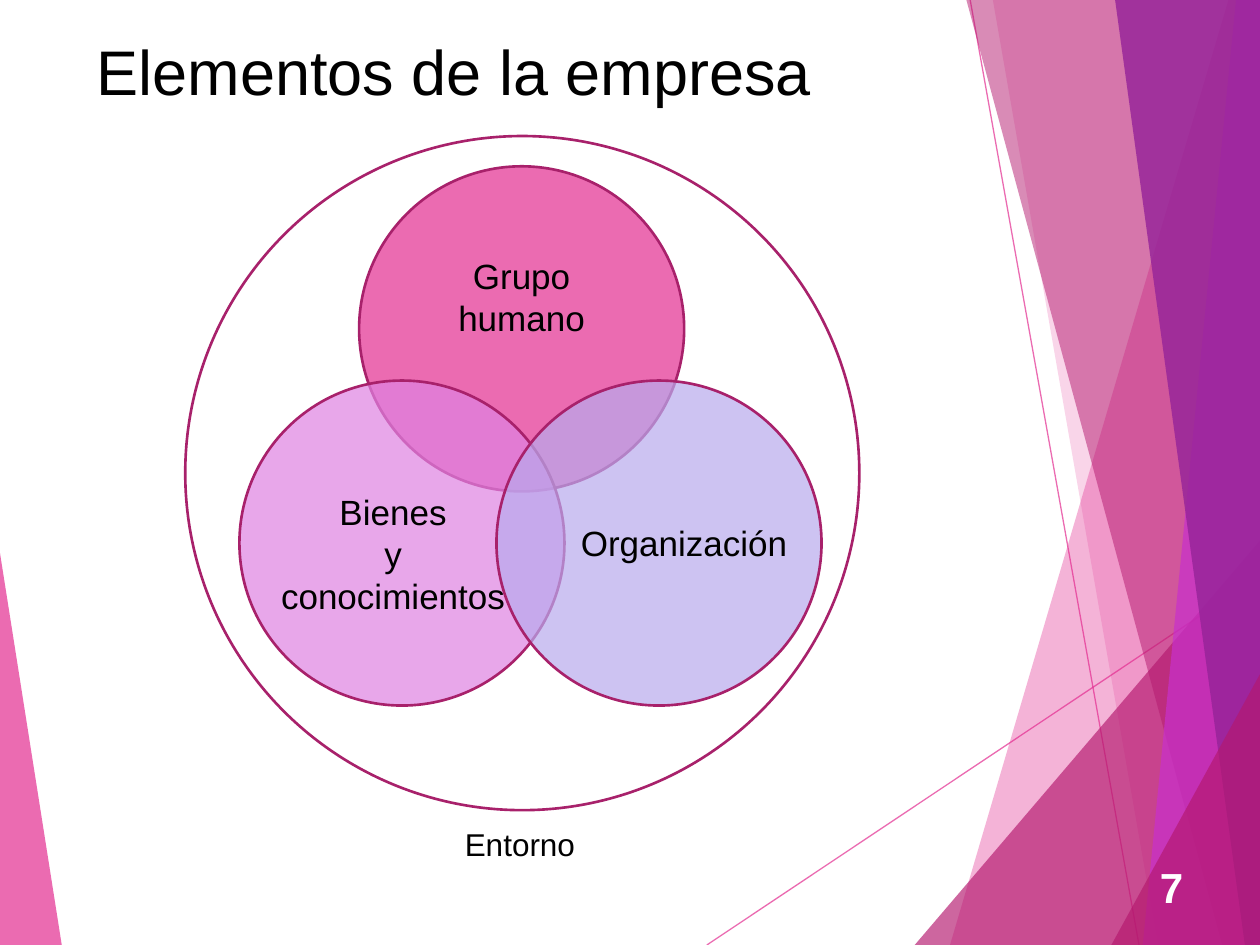
from lxml import etree
from pptx import Presentation
from pptx.dml.color import RGBColor
from pptx.enum.shapes import MSO_CONNECTOR, MSO_SHAPE
from pptx.enum.text import MSO_ANCHOR, MSO_AUTO_SIZE, PP_ALIGN
from pptx.oxml.ns import qn
from pptx.util import Inches, Pt

LEFT, CENTER, RIGHT = PP_ALIGN.LEFT, PP_ALIGN.CENTER, PP_ALIGN.RIGHT
TOP, MIDDLE = MSO_ANCHOR.TOP, MSO_ANCHOR.MIDDLE
OVAL, STRAIGHT = MSO_SHAPE.OVAL, MSO_CONNECTOR.STRAIGHT
GROW, FIXED = MSO_AUTO_SIZE.SHAPE_TO_FIT_TEXT, MSO_AUTO_SIZE.NONE

FONT = "Arial"
PINK, MAGENTA, ORCHID, PURPLE = "E32D91", "B4186E", "C830CC", "962499"
OUTLINE, BLACK, WHITE = "A8216B", "000000", "FFFFFF"

# Background: corner points, colour, opacity in percent
left_wedge = ([(0, 4.39), (0.49, 7.5), (0, 7.5)], PINK, 70)
rays = [((5.61, 7.5), (10, 4.57)), ((7.7, 0), (9.04, 7.5))]
right_facets = [
    ([(9.75, 0), (7.54, 7.5), (10, 7.5), (10, 0)], PINK, 36),
    ([(7.88, 0), (9.19, 7.5), (10, 7.5), (10, 0)], PINK, 20),
    ([(7.26, 7.5), (10, 4.29), (10, 7.5)], MAGENTA, 66),
    ([(7.67, 0), (9.7, 7.5), (10, 7.5), (10, 0)], MAGENTA, 50),
    ([(9.81, 0), (9.07, 7.5), (10, 7.5), (10, 0)], ORCHID, 70),
    ([(8.85, 0), (9.88, 7.5), (10, 7.5), (10, 0)], PURPLE, 82),
    ([(8.82, 7.5), (10, 5.35), (10, 7.5)], MAGENTA, 66),
]

# Diagram: left, top, diameter, fill
ELEMENT_SIZE = 2.58
elements = [
    (2.85, 1.32, ELEMENT_SIZE, PINK),
    (1.9, 3.02, ELEMENT_SIZE, "DF82E2"),
    (3.94, 3.02, ELEMENT_SIZE, "B8AAED"),
]
environment = (1.47, 1.08, 5.35, None)

# Labels: lines, box, size, alignment
labels = [
    (["Grupo", "humano"], (3.53, 1.97, 1.22, 0.77), 20, CENTER),
    (["Bienes", "y", "conocimientos"], (2.12, 3.84, 2, 1.11), 20, CENTER),
    (["Organización"], (4.5, 4.09, 1.86, 0.44), 20, CENTER),
    (["Entorno"], (3.59, 6.5, 1.09, 0.4), 18, LEFT),
]

prs = Presentation()
prs.slide_width, prs.slide_height = Inches(10), Inches(7.5)
slide = prs.slides.add_slide(prs.slide_layouts[6])
shapes = slide.shapes


def rgb(color):
    return RGBColor.from_string(color)


def set_opacity(shape, percent):
    """Apply opacity to the first colour: the fill, or a connector's line."""
    color = next(shape._element.spPr.iter(qn("a:srgbClr")))
    etree.SubElement(color, qn("a:alpha")).set("val", str(percent * 1000))


def add_facet(points, color, opacity):
    corners = [(Inches(x), Inches(y)) for x, y in points]
    builder = shapes.build_freeform(*corners[0])
    builder.add_line_segments(corners[1:], close=True)
    facet = builder.convert_to_shape()
    facet.shadow.inherit = False
    facet.fill.solid()
    facet.fill.fore_color.rgb = rgb(color)
    facet.line.fill.background()
    set_opacity(facet, opacity)


def add_ray(start, end):
    ray = shapes.add_connector(STRAIGHT, *map(Inches, start + end))
    ray.line.color.rgb = rgb(PINK)
    ray.line.width = Pt(0.75)
    set_opacity(ray, 70)
    etree.SubElement(ray._element.spPr, qn("a:effectLst"))


def add_circle(left, top, diameter, color):
    circle = shapes.add_shape(
        OVAL, *map(Inches, (left, top, diameter, diameter)))
    circle.shadow.inherit = False
    circle.line.color.rgb = rgb(OUTLINE)
    circle.line.width = Pt(1.5)
    if color:
        circle.fill.solid()
        circle.fill.fore_color.rgb = rgb(color)
        set_opacity(circle, 70)
    else:
        circle.fill.background()


def add_text(lines, box, size, align, color=BLACK, bold=False,
             anchor=TOP, wrap=False):
    frame = shapes.add_textbox(*map(Inches, box)).text_frame
    frame.word_wrap = wrap
    frame.auto_size = FIXED if wrap else GROW
    frame.vertical_anchor = anchor
    frame.text = "\n".join(lines)
    for paragraph in frame.paragraphs:
        paragraph.alignment = align
        font = paragraph.font
        font.name, font.size, font.bold = FONT, Pt(size), bold
        font.color.rgb = rgb(color)


# Background
add_facet(*left_wedge)
for ray_ends in rays:
    add_ray(*ray_ends)
for facet_data in right_facets:
    add_facet(*facet_data)

# Title and page number
add_text(["Elementos de la empresa"], (0.67, 0.21, 6.94, 0.98), 36, LEFT,
         wrap=True)
add_text(["7"], (8.41, 6.84, 1.08, 0.4), 24, RIGHT, WHITE, bold=True,
         anchor=MIDDLE, wrap=True)

# Diagram
for circle_data in elements + [environment]:
    add_circle(*circle_data)
for label in labels:
    add_text(*label)

prs.save("out.pptx")
